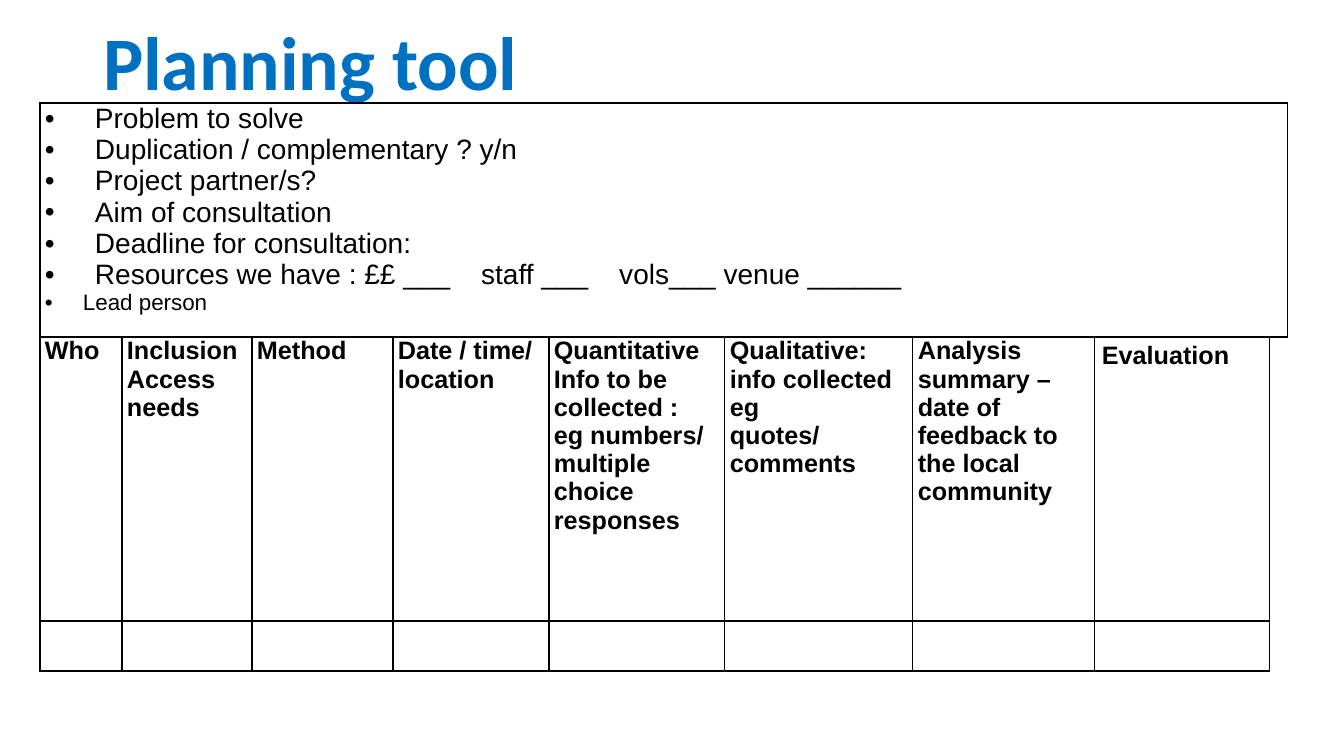
import pptx
import pptx.dml.color
import pptx.enum.text
import pptx.oxml
import pptx.oxml.ns
import pptx.util

PX = 9071  # EMU per px, 100.8 px to the inch
NO_STYLE = "{2D5ABB26-0587-4C30-8999-92F81FD0307C}"
NAMESPACE = pptx.oxml.ns.nsdecls("a")


def write(paragraph, text, color, **font_format):
    run = paragraph.add_run()
    run.text = text
    run.font.color.rgb = pptx.dml.color.RGBColor.from_string(color)
    for name, value in font_format.items():
        setattr(run.font, name, value)


def draw_borders(cell, sides):
    properties = cell._tc.get_or_add_tcPr()
    for position, side in enumerate(sides):
        properties.insert(position, pptx.oxml.parse_xml(
            f'<a:ln{side} {NAMESPACE} w="12700"><a:solidFill>'
            f'<a:srgbClr val="000000"/></a:solidFill></a:ln{side}>'))


presentation = pptx.Presentation()
presentation.slide_width = 1344 * PX
presentation.slide_height = 756 * PX
slide = presentation.slides.add_slide(presentation.slide_layouts[5])

# Title
title = slide.shapes.title
title_box = {"left": 93, "top": 40, "width": 1159, "height": 52}
for name, value in title_box.items():
    setattr(title, name, value * PX)
title.text_frame.auto_size = pptx.enum.text.MSO_AUTO_SIZE.NONE
title.text_frame.vertical_anchor = pptx.enum.text.MSO_ANCHOR.MIDDLE
title_paragraph = title.text_frame.paragraphs[0]
title_paragraph.alignment = pptx.enum.text.PP_ALIGN.LEFT
title_paragraph.line_spacing = 0.9
write(title_paragraph, "Planning tool", "0070C0", name="Calibri",
      size=pptx.util.Pt(54), bold=True)

# Table grid
column_widths = [82, 130, 141, 156, 176, 188, 182, 175, 9]
row_heights = [234, 284, 50]
last_column = len(column_widths) - 1
table = slide.shapes.add_table(
    len(row_heights), len(column_widths), 40 * PX, 103 * PX,
    sum(column_widths) * PX, sum(row_heights) * PX).table
table.first_row = False
table.horz_banding = False
table._tbl.tblPr.find(pptx.oxml.ns.qn("a:tableStyleId")).text = NO_STYLE
for column, width in zip(table.columns, column_widths):
    column.width = width * PX
for row, height in zip(table.rows, row_heights):
    row.height = height * PX

# Cell margins and borders; below the top row the last column stays open
for row_index, row in enumerate(table.rows):
    for column_index, cell in enumerate(row.cells):
        side_margin = 7 if column_index >= last_column - 1 else 5
        cell_format = {"margin_left": side_margin * PX, "margin_right": side_margin * PX,
                       "margin_top": 0, "margin_bottom": 0}
        for name, value in cell_format.items():
            setattr(cell, name, value)
        cell.fill.background()
        is_open = row_index > 0 and column_index == last_column
        draw_borders(cell, "L" if is_open else "LRTB")

# Planning questions across the top row
questions = [
    ("Problem to solve", 20, 50),
    ("Duplication / complementary ? y/n", 20, 50),
    ("Project partner/s?", 20, 50),
    ("Aim of consultation", 20, 50),
    ("Deadline for consultation:", 20, 50),
    ("Resources we have : ££ ___    staff ___    vols___ venue ______", 20, 50),
    ("Lead person", 16, 38),
]
question_cell = table.cell(0, 0)
question_cell.merge(table.cell(0, last_column))
for index, (text, size, indent) in enumerate(questions):
    frame = question_cell.text_frame
    paragraph = frame.add_paragraph() if index else frame.paragraphs[0]
    properties = paragraph._p.get_or_add_pPr()
    properties.set("marL", str(indent * PX))
    properties.set("indent", str(-indent * PX))
    for bullet in ('buFont {} typeface="Arial"', 'buChar {} char="•"'):
        properties.append(pptx.oxml.parse_xml(f"<a:{bullet.format(NAMESPACE)}/>"))
    write(paragraph, text, "000000", name="Arial", size=pptx.util.Pt(size))

# Column headings
headings = [
    ["Who"],
    ["Inclusion Access needs"],
    ["Method"],
    ["Date / time/ location"],
    ["Quantitative Info to be collected :", "eg numbers/ multiple choice responses"],
    ["Qualitative: info collected", "eg", "quotes/ comments"],
    ["Analysis summary – date of feedback to the local community"],
    ["Evaluation"],
]
for column_index, lines in enumerate(headings):
    frame = table.cell(1, column_index).text_frame
    for index, text in enumerate(lines):
        paragraph = frame.add_paragraph() if index else frame.paragraphs[0]
        write(paragraph, text, "000000", name="Arial", size=pptx.util.Pt(18), bold=True)
evaluation = table.cell(1, len(headings) - 1).text_frame.paragraphs[0]
evaluation.line_spacing = 1.15
evaluation.space_after = pptx.util.Pt(10)

presentation.save("out.pptx")
